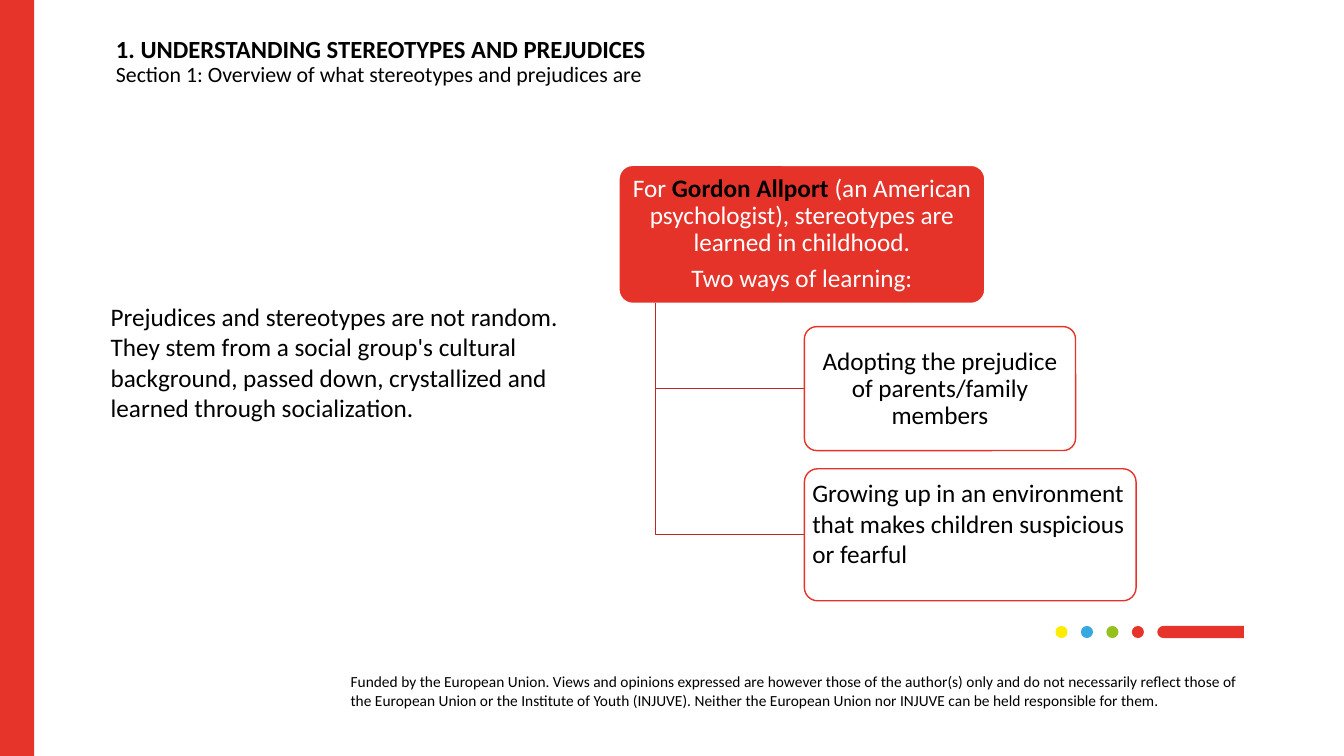
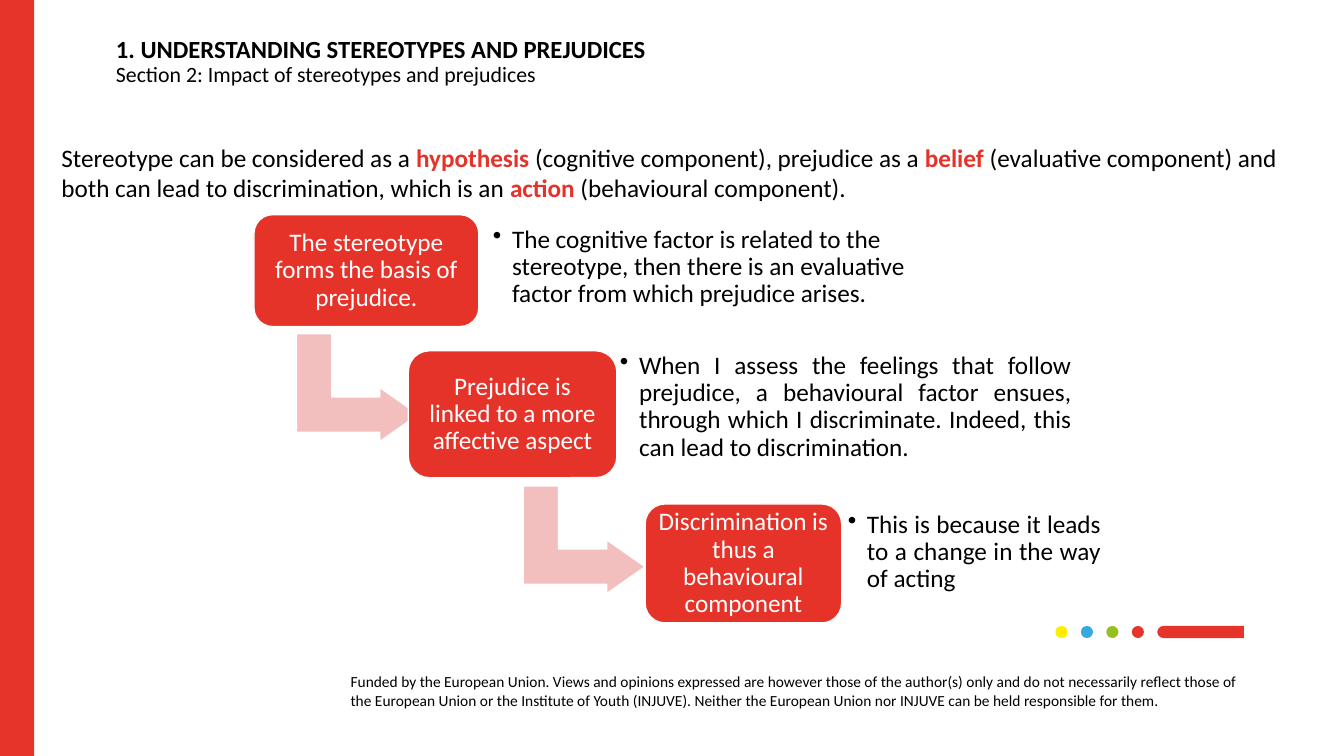
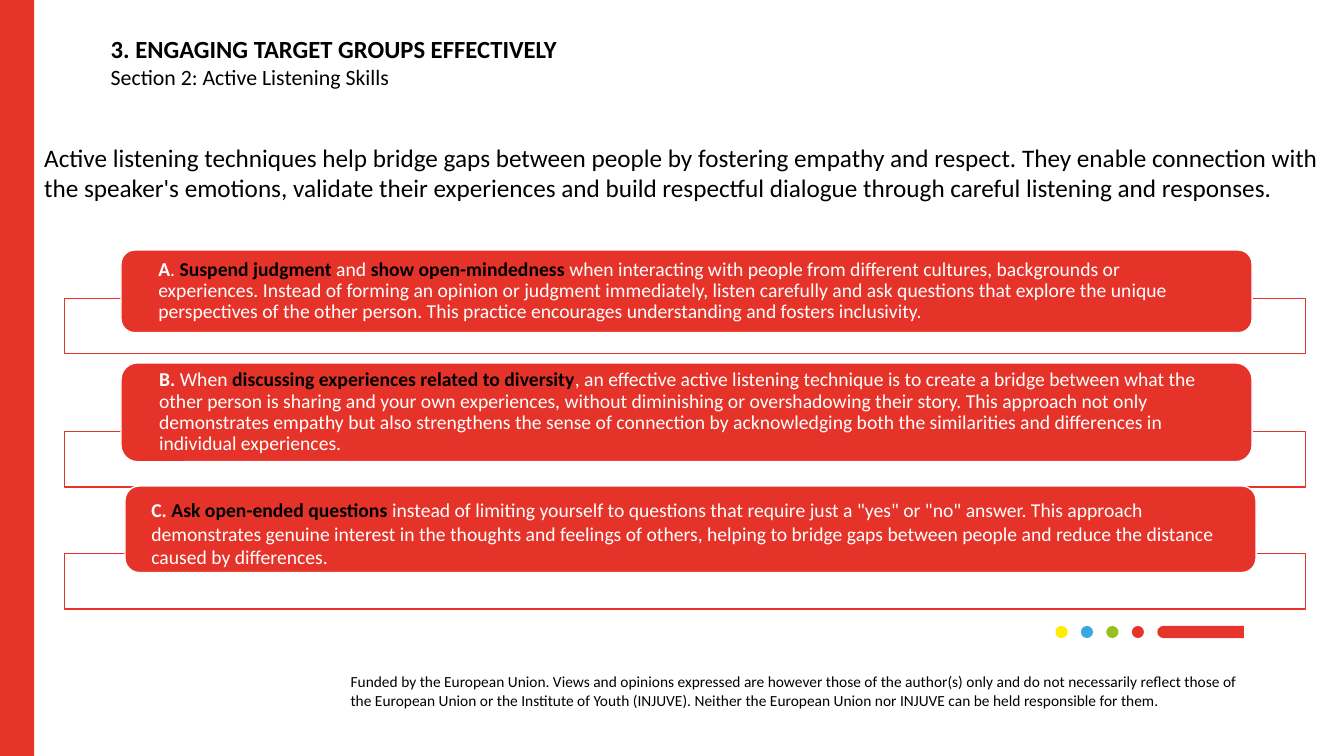
from dataclasses import dataclass
from lxml import etree
from pptx import Presentation
from pptx.dml.color import RGBColor
from pptx.enum import shapes as es, text as et
from pptx.oxml import ns
from pptx.util import Inches, Pt

BAND = RGBColor(0xE6, 0x34, 0x2A)
RED = RGBColor(0xE6, 0x33, 0x2A)
DARK = RGBColor(0xB8, 0x29, 0x22)
PINK = RGBColor(0xF3, 0xBF, 0xBE)
GREEN = RGBColor(0x94, 0xC1, 0x1E)
BLUE = RGBColor(0x36, 0xA9, 0xE0)
YELLOW = RGBColor(0xFE, 0xED, 0x00)
WHITE = RGBColor(0xFF, 0xFF, 0xFF)
BLACK = RGBColor(0, 0, 0)
FONT = "Calibri"
KIND = es.MSO_SHAPE
LEFT, MID, FULL = et.PP_ALIGN.LEFT, et.PP_ALIGN.CENTER, et.PP_ALIGN.JUSTIFY
TOP, CENTER = et.MSO_ANCHOR.TOP, et.MSO_ANCHOR.MIDDLE
FUNDING = (
    "Funded by the European Union. Views and opinions expressed are however those of the "
    "author(s) only and do not necessarily reflect those of the European Union or the "
    "Institute of Youth (INJUVE). Neither the European Union nor INJUVE can be held "
    "responsible for them."
)


@dataclass
class Box:
    x: float
    y: float
    w: float
    h: float

    def cut(self, x, y, w, h):
        return Box(self.x + self.w * x / 100, self.y + self.h * y / 100,
                   self.w * w / 100, self.h * h / 100)

    def emu(self):
        return [Inches(n) for n in (self.x, self.y, self.w, self.h)]


PAGE = Box(0, 0, 13.33, 7.5)


def put(item, **vals):
    for name, val in vals.items():
        setattr(item, name, val)


def bold(words, color):
    return words, {"color": color, "bold": True}


def dot(par):
    props = par._p.get_or_add_pPr()
    props.set("marL", str(Inches(0.19)))
    props.set("indent", str(-Inches(0.19)))
    etree.SubElement(props, ns.qn("a:buChar")).set("char", "•")


def write(shape, paras, size=18, color=BLACK, align=LEFT, gap=1.0,
          anchor=TOP, pad=(0.1, 0.05, 0.1, 0.05), bullet=False):
    frame = shape.text_frame
    sides = ("left", "top", "right", "bottom")
    put(frame, word_wrap=True, vertical_anchor=anchor,
        **{f"margin_{side}": Inches(n) for side, n in zip(sides, pad)})
    for i, runs in enumerate(paras):
        par = frame.add_paragraph() if i else frame.paragraphs[0]
        if bullet:
            dot(par)
        put(par, alignment=align, line_spacing=gap)
        if i:
            par.space_before = Pt(6.3 if align == MID else 0)
        for run in runs:
            words, look = (run, {}) if isinstance(run, str) else run
            look = {"size": size, "color": color, "bold": False, **look}
            part = par.add_run()
            part.text = words
            put(part.font, name=FONT, size=Pt(look["size"]), bold=look["bold"])
            part.font.color.rgb = look["color"]
    return frame


def note(slide, box, paras, **look):
    return write(slide.shapes.add_textbox(*box.emu()), paras, **look)


def draw(slide, kind, box, fill, line=None, adj=(), turn=0):
    shape = slide.shapes.add_shape(kind, *box.emu())
    put(shape, rotation=turn)
    shape.shadow.inherit = False
    shape.fill.solid()
    shape.fill.fore_color.rgb = fill
    if line is None:
        shape.line.fill.background()
    else:
        shape.line.color.rgb = line
        shape.line.width = Pt(1)
    for i, val in enumerate(adj):
        shape.adjustments[i] = val
    return shape


def tail(slide, box):
    for i, color in enumerate((YELLOW, BLUE, GREEN, BAND, BAND)):
        draw(slide, KIND.OVAL, box.cut(i * 13.5, 0, 6.42, 100), color)
    draw(slide, KIND.RECTANGLE, box.cut(57.75, 0, 42.25, 100), BAND)


def base(deck):
    slide = deck.slides.add_slide(deck.slide_layouts[6])
    draw(slide, KIND.RECTANGLE, PAGE.cut(0, 0, 2.55, 100), BAND)
    tail(slide, PAGE.cut(78.53, 82.8, 14.03, 1.6))
    note(slide, PAGE.cut(25.35, 88.27, 67.73, 6.27), [[FUNDING]], size=11)
    return slide


def title(slide, head, sub, left=0.15, gap=0.9):
    frame = note(slide, PAGE.cut(7.5, 4.27, 57, 9.2),
                 [[(head, {"size": 17.6, "bold": True})], [sub]],
                 size=15.6, gap=0.9, pad=(left, 0.05, 0.1, 0.05))
    frame.paragraphs[1].line_spacing = gap


def elbow(slide, x, y, leaf):
    end = leaf.y + leaf.h / 2
    pen = slide.shapes.build_freeform(Inches(x), Inches(y))
    pen.add_line_segments([(Inches(x), Inches(end)), (Inches(leaf.x), Inches(end))],
                          close=False)
    line = pen.convert_to_shape()
    line.shadow.inherit = False
    line.fill.background()
    line.line.color.rgb = DARK
    line.line.width = Pt(1)


def tree(slide, box, root, leaves):
    top = box.cut(0, 0, 70.76, 31.71)
    card = draw(slide, KIND.ROUNDED_RECTANGLE, top, RED, WHITE, [0.1])
    write(card, root, color=WHITE, align=MID, gap=0.9, anchor=CENTER,
          pad=(0.04, 0.03, 0.04, 0.03))
    for place, words, look in leaves:
        leaf = box.cut(*place)
        elbow(slide, top.x + top.w / 10, top.y + top.h, leaf)
        card = draw(slide, KIND.ROUNDED_RECTANGLE, leaf, WHITE, RED, [0.1])
        write(card, [[words]], pad=(0.04, 0.05, 0.04, 0.03), **look)


def stairs(slide, box, steps):
    pad = (0.07,) * 4
    for place, head, side, body, align, arrow in steps:
        if arrow:
            draw(slide, KIND.BENT_UP_ARROW, box.cut(*arrow, 12.63, 29.88), PINK, WHITE,
                 [0.328, 0.25, 0.358], 90)
        card = draw(slide, KIND.ROUNDED_RECTANGLE, box.cut(*place), RED, WHITE, [0.167])
        write(card, [[head]], color=WHITE, align=MID, gap=0.9, anchor=CENTER,
              pad=(0.07, 0, 0.07, 0))
        note(slide, box.cut(*side), [[body]], align=align, gap=0.9, anchor=CENTER,
             pad=pad, bullet=True)


def bars(slide, box, items):
    for low, place, runs, gap, pad in items:
        draw(slide, KIND.RECTANGLE, box.cut(0, low, 100, 15.45), WHITE, RED)
        x, y, h = place
        bar = draw(slide, KIND.ROUNDED_RECTANGLE, box.cut(x, y, 91.15, h), RED, WHITE)
        write(bar, [runs], size=14, color=WHITE, gap=gap, anchor=CENTER, pad=pad)


def origin(deck):
    slide = base(deck)
    note(slide, PAGE.cut(7.5, 39.2, 35.78, 21.6), [[
        "Prejudices and stereotypes are not random. They stem from a social group's cultural "
        "background, passed down, crystallized and learned through socialization."]])
    tree(slide, PAGE.cut(46.05, 21.87, 38.48, 57.6), [
        ["For ", bold("Gordon Allport ", BLACK),
         "(an American psychologist), stereotypes are learned in childhood."],
        ["Two ways of learning:"],
    ], [
        ((35.87, 37.04, 52.44, 28.47), "Adopting the prejudice of parents/family members",
         {"align": MID, "gap": 0.9, "anchor": CENTER}),
        ((35.87, 69.68, 64.13, 30.32),
         "Growing up in an environment that makes children suspicious or fearful", {}),
    ])
    title(slide, "1. UNDERSTANDING STEREOTYPES AND PREJUDICES",
          "Section 1: Overview of what stereotypes and prejudices are")


def impact(deck):
    slide = base(deck)
    stairs(slide, PAGE.cut(18.9, 28.4, 63.53, 54), [
        ((0, 0, 26.33, 27.41), "The stereotype forms the basis of prejudice.",
         (27.15, 0.25, 51.12, 25.19),
         "The cognitive factor is related to the stereotype, then there is an evaluative "
         "factor from which prejudice arises.", LEFT, (5.79, 27.41)),
        ((18.06, 33.33, 24.44, 31.11), "Prejudice is linked to a more affective aspect",
         (42.03, 29.14, 54.55, 36.05),
         "When I assess the feelings that follow prejudice, a behavioural factor ensues, "
         "through which I discriminate. Indeed, this can lead to discrimination.",
         FULL, (32.35, 64.69)),
        ((45.81, 70.86, 23.02, 29.14), "Discrimination is thus a behavioural component",
         (68.71, 70.12, 31.29, 25.19),
         "This is because it leads to a change in the way of acting", FULL, None),
    ])
    note(slide, PAGE.cut(3.83, 18.13, 93.67, 9.47), [[
        "Stereotype can be considered as a ", bold("hypothesis", RED),
        " (cognitive component), prejudice as a ", bold("belief", RED),
        " (evaluative component) and both can lead to discrimination, which is an ",
        bold("action", RED), " (behavioural component)."]])
    title(slide, "1. UNDERSTANDING STEREOTYPES AND PREJUDICES",
          "Section 2: Impact of stereotypes and prejudices")


def listen(deck):
    slide = base(deck)
    wide = (0.33, 0, 0.33, 0)
    bars(slide, PAGE.cut(4.8, 33.07, 92.33, 47.47), [
        (13.48, (4.55, 0, 23.03), [
            bold("A", WHITE), ". ", bold("Suspend judgment ", BLACK), "and ",
            bold("show open-mindedness ", BLACK),
            "when interacting with people from different cultures, backgrounds or "
            "experiences. Instead of forming an opinion or judgment immediately, listen "
            "carefully and ask questions that explore the unique perspectives of the other "
            "person. This practice encourages understanding and fosters inclusivity.",
        ], 0.9, wide),
        (50.56, (4.55, 31.46, 27.53), [
            bold("B. ", WHITE), "When ",
            bold("discussing experiences related to diversity", BLACK),
            ", an effective active listening technique is to create a bridge between what "
            "the other person is sharing and your own experiences, without diminishing or "
            "overshadowing their story. This approach not only demonstrates empathy but also "
            "strengthens the sense of connection by acknowledging both the similarities and "
            "differences in individual experiences.",
        ], 0.9, wide),
        (84.55, (4.87, 65.73, 24.16), [
            bold("C. ", WHITE), bold("Ask open-ended questions ", BLACK),
            "instead of limiting yourself to questions that require just a \"yes\" or \"no\" "
            "answer. This approach demonstrates genuine interest in the thoughts and feelings "
            "of others, helping to bridge gaps between people and reduce the distance caused "
            "by differences.",
        ], 1.0, (0.22, 0.08, 0.32, 0)),
    ])
    note(slide, PAGE.cut(2.55, 18.13, 96.83, 9.47), [[
        "Active listening techniques help bridge gaps between people by fostering empathy and "
        "respect. They enable connection with the speaker's emotions, validate their "
        "experiences and build respectful dialogue through careful listening and responses."]])
    title(slide, "3. ENGAGING TARGET GROUPS EFFECTIVELY", "Section 2: Active Listening Skills",
          left=0.1, gap=1.0)


def main():
    deck = Presentation()
    put(deck, slide_width=Inches(PAGE.w), slide_height=Inches(PAGE.h))
    for make in (origin, impact, listen):
        make(deck)
    deck.save("out.pptx")


if __name__ == "__main__":
    main()
